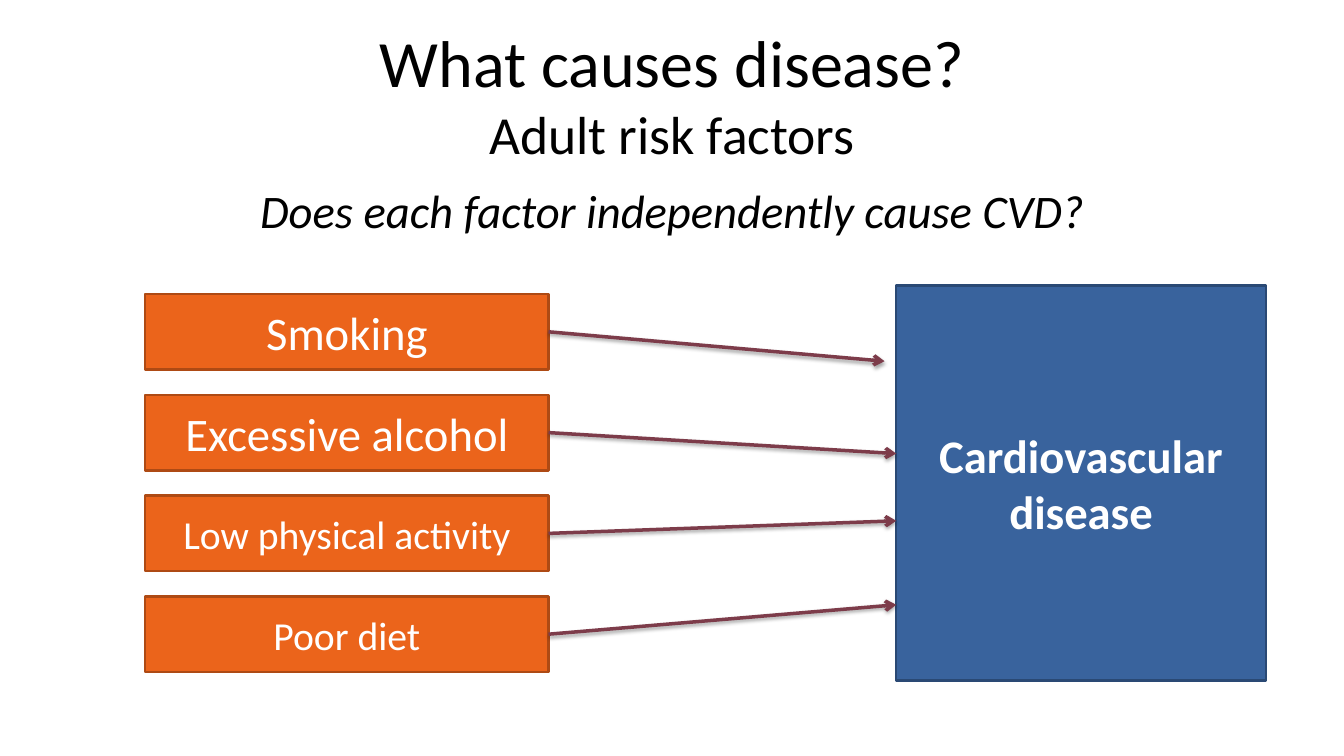
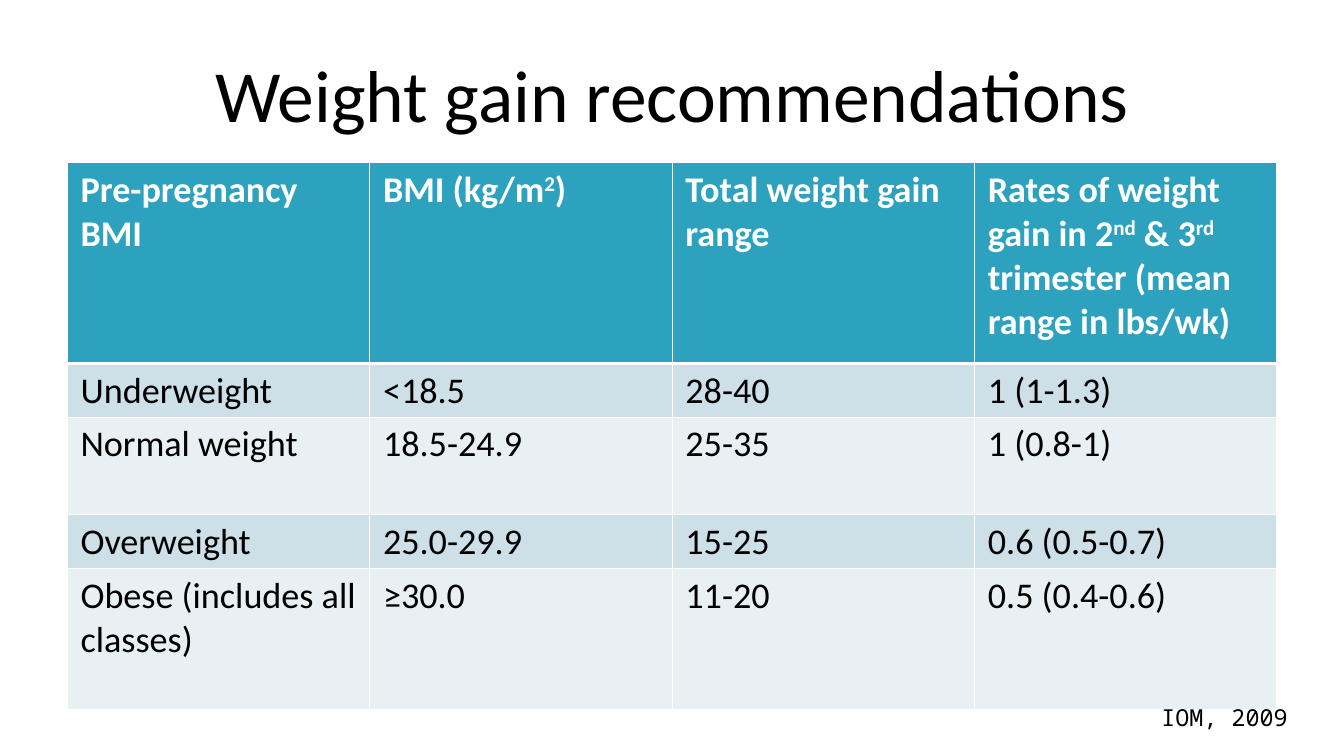
import pptx
import pptx.util
import pptx.dml.color
import pptx.enum.shapes
import pptx.enum.text
import pptx.oxml
import pptx.oxml.ns

Inches = pptx.util.Inches
ALIGN = pptx.enum.text.PP_ALIGN
ANCHOR = pptx.enum.text.MSO_ANCHOR
RECTANGLE = pptx.enum.shapes.MSO_SHAPE.RECTANGLE
STRAIGHT = pptx.enum.shapes.MSO_CONNECTOR.STRAIGHT
NAMESPACE = pptx.oxml.ns.nsdecls("a")

COLORS = {
    name: pptx.dml.color.RGBColor.from_string(value)
    for name, value in {
        "black": "000000", "white": "FFFFFF",
        "factor": "EB641B", "factor_line": "AE4A14",
        "disease": "39639D", "disease_line": "2A4974", "arrow": "7D3C4A",
        "header": "2DA2BF", "band_dark": "CDE0E8", "band_light": "E8F0F4",
    }.items()
}


def write(frame, text, size, color="black", align=ALIGN.CENTER,
          font="Calibri", bold=False, italic=False):
    """Fill a text frame; the parts between ^ marks are superscript."""
    frame.word_wrap = True
    frame.margin_left = frame.margin_right = Inches(0.14)
    frame.margin_top = frame.margin_bottom = Inches(0.07)
    para = frame.paragraphs[0]
    first, *others = text.split("^")
    para.text = first
    para.alignment = align
    for number, part in enumerate(others):
        span = para.add_run()
        span.text = part
        if number % 2 == 0:
            span.font._element.set("baseline", "30000")
    for span in para.runs:
        span.font.size = pptx.util.Pt(size)
        span.font.name = font
        span.font.bold = bold
        span.font.italic = italic
        span.font.color.rgb = COLORS[color]


def add_box(page, left, top, width, height, fill):
    box = page.shapes.add_shape(
        RECTANGLE, Inches(left), Inches(top), Inches(width), Inches(height))
    box.shadow.inherit = False
    box.fill.solid()
    box.fill.fore_color.rgb = COLORS[fill]
    box.line.color.rgb = COLORS[fill + "_line"]
    box.line.width = pptx.util.Pt(2)
    box.text_frame.vertical_anchor = ANCHOR.MIDDLE
    return box


deck = pptx.Presentation()
deck.slide_width, deck.slide_height = Inches(16), Inches(9)

# Both pages with their titles
pages = []
for title_text, title_size in [
    ("What causes disease?\vAdult risk factors", 56.7),
    ("Weight gain recommendations", 63),
]:
    page = deck.slides.add_slide(deck.slide_layouts[6])
    title = page.shapes.add_textbox(
        Inches(0.8), Inches(0.36), Inches(14.4), Inches(1.5))
    title.text_frame.vertical_anchor = ANCHOR.MIDDLE
    write(title.text_frame, title_text, title_size)
    for span in title.text_frame.paragraphs[0].runs[1:]:
        span.font.size = pptx.util.Pt(45.9)
    pages.append(page)
causes_page, weight_page = pages

# Slide 1: question and disease
question = causes_page.shapes.add_textbox(
    Inches(0.8), Inches(2.1), Inches(14.4), Inches(0.8))
write(question.text_frame, "Does each factor independently cause CVD?", 40, italic=True)

disease = add_box(causes_page, 10.67, 3.4, 4.4, 4.7, "disease")
write(disease.text_frame, "Cardiovascular disease", 40, "white", bold=True)

# Slide 1: risk factors, each with an arrow to the disease
factors = [
    ("Smoking", 40, 10.53, 4.3),
    ("Excessive alcohol", 40, 10.67, 5.4),
    ("Low physical activity", 34, 10.67, 6.2),
    ("Poor diet", 34, 10.67, 7.2),
]
for index, (label, size, end_x, end_y) in enumerate(factors):
    top = 3.5 + 1.2 * index
    factor = add_box(causes_page, 1.73, top, 4.8, 0.9, "factor")
    write(factor.text_frame, label, size, "white")

    arrow = causes_page.shapes.add_connector(
        STRAIGHT, Inches(6.53), Inches(top + 0.45), Inches(end_x), Inches(end_y))
    arrow.line.color.rgb = COLORS["arrow"]
    arrow.line.width = pptx.util.Pt(3)
    arrow.line._get_or_add_ln().append(
        pptx.oxml.parse_xml(f'<a:tailEnd {NAMESPACE} type="arrow"/>'))
    arrow._element.spPr.append(pptx.oxml.parse_xml(
        f'<a:effectLst {NAMESPACE}>'
        '<a:outerShdw blurRad="40000" dist="23000" dir="5400000" rotWithShape="0">'
        '<a:srgbClr val="000000"><a:alpha val="35000"/></a:srgbClr>'
        '</a:outerShdw></a:effectLst>'))

# Slide 2: table
rows = [
    ["Pre-pregnancy BMI", "BMI (kg/m^2^)", "Total weight gain range",
     "Rates of weight gain in 2^nd^ & 3^rd^ trimester (mean range in lbs/wk)"],
    ["Underweight", "<18.5", "28-40", "1 (1-1.3)"],
    ["Normal weight", "18.5-24.9", "25-35", "1 (0.8-1)"],
    ["Overweight", "25.0-29.9", "15-25", "0.6 (0.5-0.7)"],
    ["Obese (includes all classes)", "≥30.0", "11-20", "0.5 (0.4-0.6)"],
]
row_heights = [2.39, 0.64, 1.16, 0.64, 1.68]
table = weight_page.shapes.add_table(
    len(rows), len(rows[0]), Inches(0.8), Inches(1.94),
    Inches(14.4), Inches(sum(row_heights))).table
for row_index, (texts, height) in enumerate(zip(rows, row_heights)):
    table.rows[row_index].height = Inches(height)
    is_header = row_index == 0
    band = "header" if is_header else "band_dark" if row_index % 2 else "band_light"
    for column_index, text in enumerate(texts):
        cell = table.cell(row_index, column_index)
        write(cell.text_frame, text, 31, "white" if is_header else "black",
              ALIGN.LEFT, bold=is_header)
        cell.margin_left = cell.margin_right = Inches(0.16)
        cell.margin_top = cell.margin_bottom = Inches(0.06)
        # The line between header and body is thicker
        for side in "LRTB":
            is_thick = (row_index, side) in [(0, "B"), (1, "T")]
            width = pptx.util.Pt(3 if is_thick else 1)
            cell._tc.get_or_add_tcPr().append(pptx.oxml.parse_xml(
                f'<a:ln{side} {NAMESPACE} w="{width}"><a:solidFill>'
                f'<a:srgbClr val="{COLORS["white"]}"/></a:solidFill></a:ln{side}>'))
        cell.fill.solid()
        cell.fill.fore_color.rgb = COLORS[band]

# Slide 2: citation
citation = weight_page.shapes.add_textbox(
    Inches(11.6), Inches(8.3), Inches(3.87), Inches(0.48))
write(citation.text_frame, "IOM, 2009", 20, align=ALIGN.RIGHT, font="Noto Sans Mono")

deck.save("out.pptx")
